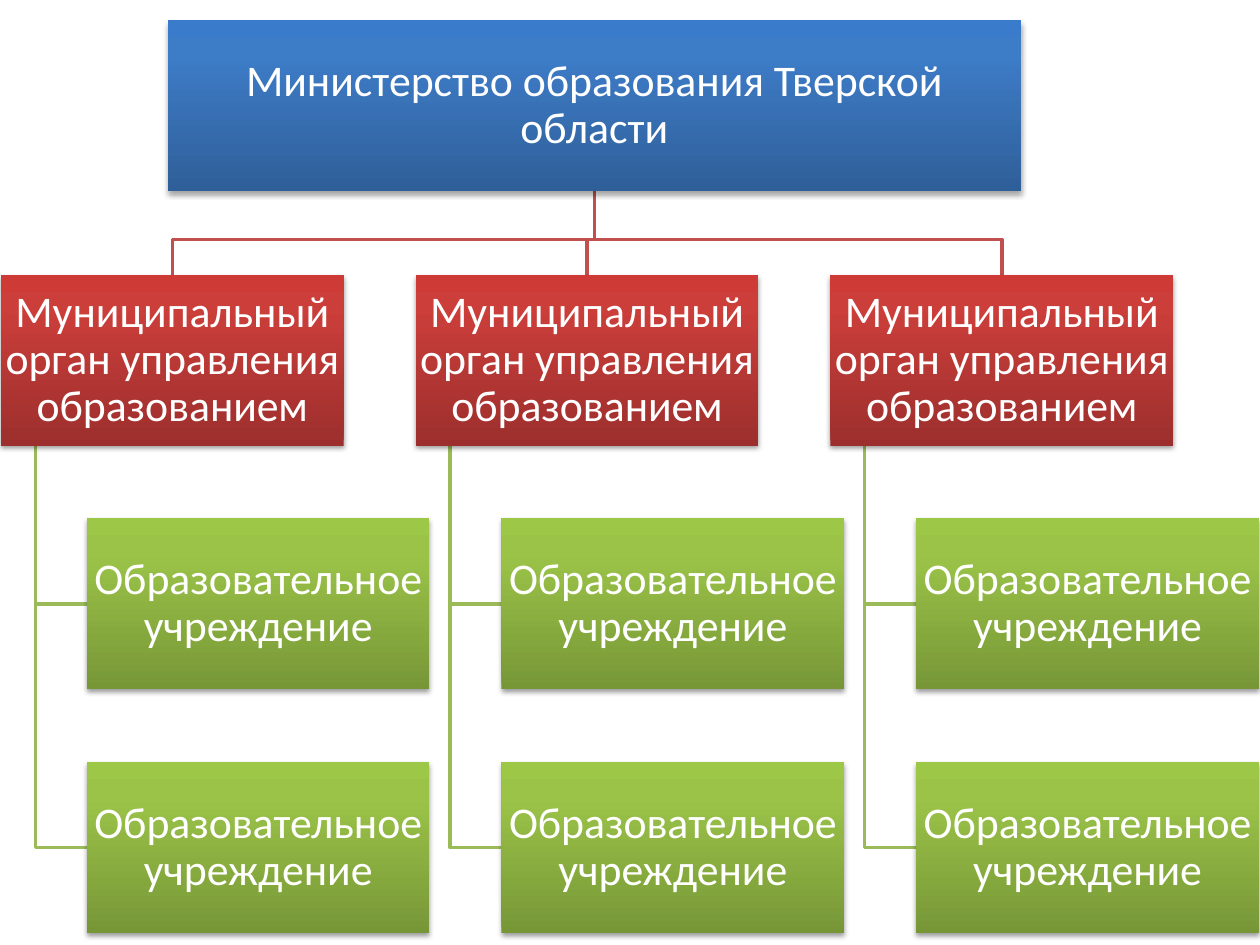
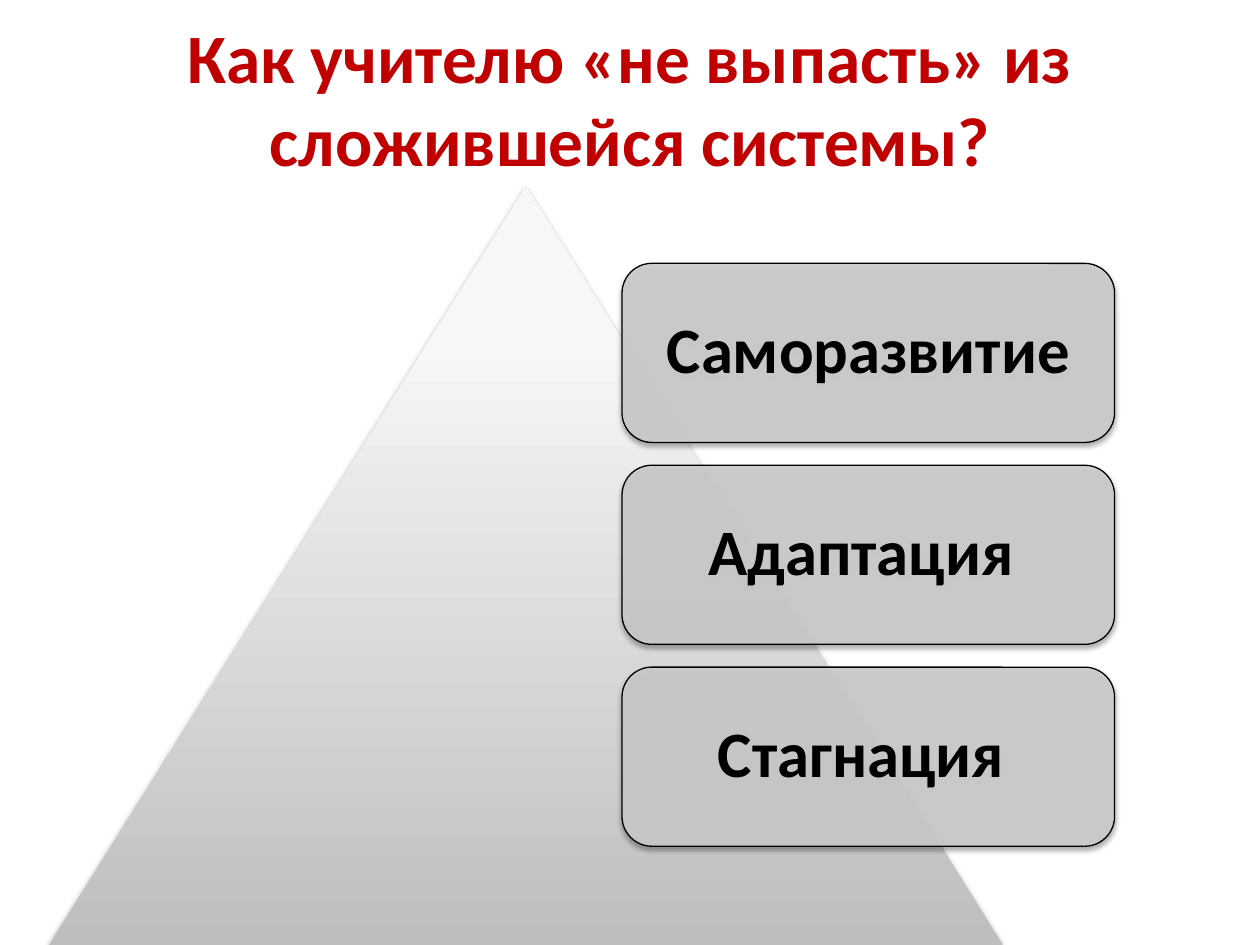
from copy import deepcopy

from lxml import etree
from pptx import Presentation
from pptx.dml.color import RGBColor
from pptx.enum import shapes, text
from pptx.oxml.ns import qn
from pptx.util import Cm, Pt

BLUE = ("2F5F99", "3D7CC7", "3A7CCB")
RED = ("9C2F2D", "CB3E3A", "CE3B37")
GREEN = ("779737", "9BC348", "9DC746")
GREY = ("BEBEBE", "F7F7F7", "F8F8F8")
RECT = shapes.MSO_SHAPE.RECTANGLE


def rgb(value):
    return RGBColor.from_string(value)


def add_text(slide, words, x, y, w, h, kind=None, grad=None, fill=None, alpha=90, line=None,
             shadow=(35, 1.8), size=25, color="FFFFFF", bold=False, inset=0.04, spacing=0.9):
    """Add words in a preset shape, or in a plain text box when kind is None."""
    place = Cm(x), Cm(y), Cm(w), Cm(h)
    if kind is None:
        sp = slide.shapes.add_textbox(*place)
    else:
        sp = slide.shapes.add_shape(kind, *place)
        props = sp._element.spPr
        if grad:
            sp.fill.gradient()
            sp.fill.gradient_angle = 90
            stops = props.find(".//" + qn("a:gsLst"))
            stops.append(deepcopy(stops[-1]))
            for stop, pos, shade in zip(sp.fill.gradient_stops, (0, 0.8, 1), grad):
                stop.position = pos
                stop.color.rgb = rgb(shade)
        else:
            sp.fill.solid()
            sp.fill.fore_color.rgb = rgb(fill)
            clr = props.find(qn("a:solidFill"))[0]
            etree.SubElement(clr, qn("a:alpha"), val=str(alpha * 1000))
        if line:
            sp.line.color.rgb = rgb(line)
            sp.line.width = Pt(0.75)
        else:
            sp.line.fill.background()
        # Soft shadow straight below
        sp.shadow.inherit = False
        opacity, distance = shadow
        outer = etree.SubElement(props.find(qn("a:effectLst")), qn("a:outerShdw"),
                                 blurRad=str(Pt(3.1)), dist=str(Pt(distance)),
                                 dir="5400000", rotWithShape="0")
        black = etree.SubElement(outer, qn("a:srgbClr"), val="000000")
        etree.SubElement(black, qn("a:alpha"), val=str(opacity * 1000))
    if words:
        tf = sp.text_frame
        tf.word_wrap = True
        tf.vertical_anchor = text.MSO_ANCHOR.MIDDLE
        tf.margin_left = tf.margin_right = tf.margin_top = tf.margin_bottom = Cm(inset)
        p = tf.paragraphs[0]
        p.alignment = text.PP_ALIGN.CENTER
        p.line_spacing = spacing
        r = p.add_run()
        r.text = words
        r.font.name = "Calibri"
        r.font.size = Pt(size)
        r.font.bold = bold
        r.font.color.rgb = rgb(color)
    return sp


prs = Presentation()
prs.slide_width, prs.slide_height = Cm(25.4), Cm(19.05)
blank = prs.slide_layouts[6]

# Slide 1: organisation chart
s = prs.slides.add_slide(blank)
box_w, box_h = 6.91, 3.45
col_step, row_step = 8.36, 4.91
left, body_top, indent = 0.02, 5.54, 1.73
top_x, top_y, top_w = 3.38, 0.41, 17.2
bus_y = 4.83
columns = [left + i * col_step for i in range(3)]
rows = [body_top + i * row_step for i in (1, 2)]

# Branch lines, behind the boxes
trunk_x, trunk_y = top_x + top_w / 2, top_y + box_h
branches = []
for x in columns:
    middle, hang = x + box_w / 2, x + box_w / 10
    for y in rows:
        branches.append(("9BBB59", [(hang, body_top + box_h), (hang, y + box_h / 2),
                                    (x + indent, y + box_h / 2)]))
    branches.append(("C0504D", [(trunk_x, trunk_y), (trunk_x, bus_y),
                                (middle, bus_y), (middle, body_top)]))
for color, points in branches:
    start, *rest = [(Cm(x), Cm(y)) for x, y in points]
    outline = s.shapes.build_freeform(*start)
    outline.add_line_segments(rest, close=False)
    branch = outline.convert_to_shape()
    branch.fill.background()
    branch.line.color.rgb = rgb(color)
    branch.line.width = Pt(2)
    branch.shadow.inherit = False

# Boxes
add_text(s, "Министерство образования Тверской области", top_x, top_y, top_w, box_h,
         kind=RECT, grad=BLUE)
for x in columns:
    add_text(s, "Муниципальный орган управления образованием", x, body_top, box_w, box_h,
             kind=RECT, grad=RED, shadow=(38, 1.6))
    for y in rows:
        add_text(s, "Образовательное учреждение", x + indent, y, box_w, box_h,
                 kind=RECT, grad=GREEN, shadow=(38, 1.6))

# Slide 2: pyramid with three levels
s = prs.slides.add_slide(blank)
add_text(s, "Как учителю «не выпасть» из сложившейся системы?", 1.27, 0.76, 22.86, 2.41,
         size=39.6, color="C00000", bold=True, inset=0.2, spacing=1.0)
add_text(s, "", 0.99, 3.76, 19.23, 15.29, kind=shapes.MSO_SHAPE.ISOSCELES_TRIANGLE, grad=GREY)
for i, level in enumerate(("Саморазвитие", "Адаптация ", "Стагнация ")):
    add_text(s, level, 12.54, 5.31 + i * 4.07, 9.93, 3.61,
             kind=shapes.MSO_SHAPE.ROUNDED_RECTANGLE, fill="CCCCCC", line="000000",
             size=37, color="000000", bold=True, inset=0.38)

prs.save("out.pptx")
